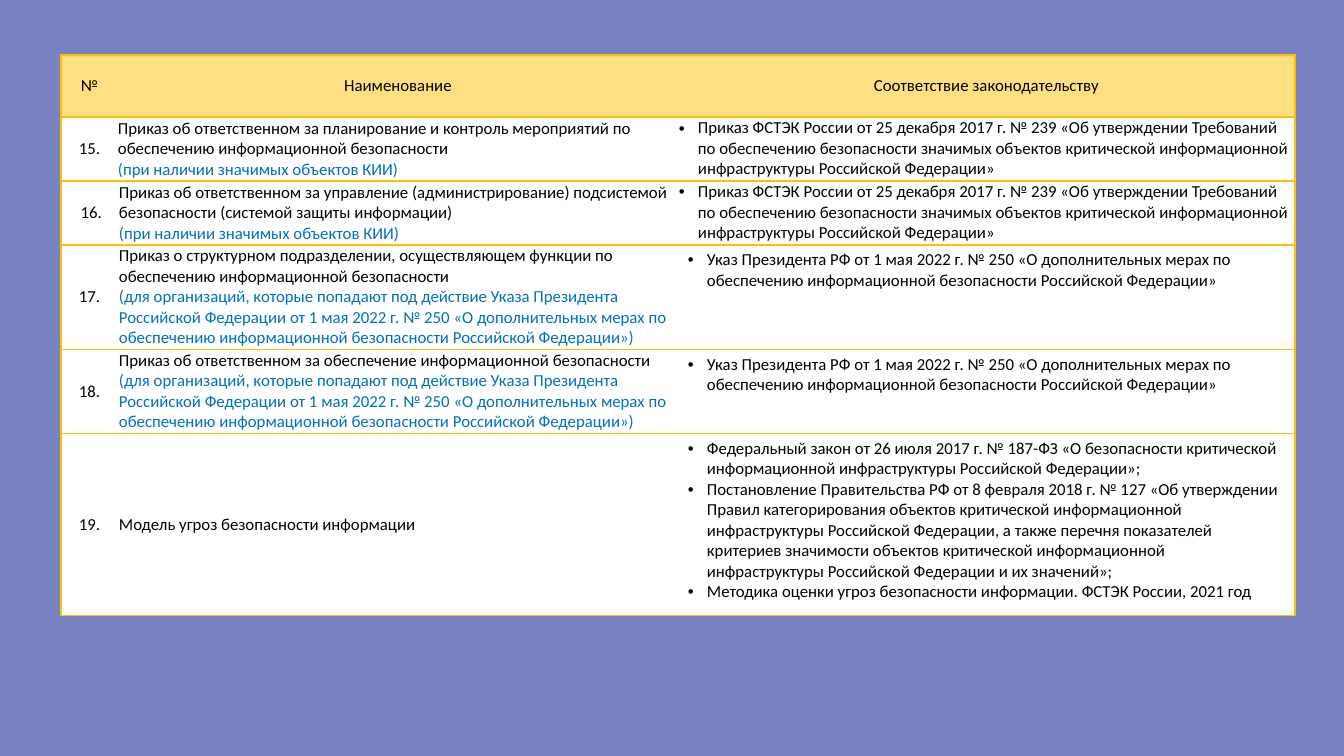
from lxml import etree
from pptx import Presentation
from pptx.dml.color import RGBColor
from pptx.enum.text import MSO_ANCHOR, PP_ALIGN
from pptx.oxml.ns import qn
from pptx.util import Pt

PX = 914400 / 100.8
COLORS = {"background": "7883C0", "header": "FFDF7F", "body": "FFFFFF",
          "border": "FFC000", "text": "000000", "condition": "0070C0"}
COLUMN_WIDTHS = [57, 560, 617]
ROW_HEIGHTS = [62, 64, 64, 104, 84, 182]
MARGIN_SIDES = ["left", "right", "top", "bottom"]
TIGHT, SNUG, ROOMY = [0] * 4, [1] * 4, [10, 10, 5, 5]


def px(length):
    return round(length * PX)


def add_border(cell, position, side, color):
    """Insert one cell edge ahead of the fill; no color hides the edge."""
    line = etree.Element(qn(f"a:ln{side}"), w=str(Pt(1)))
    if color:
        fill = etree.SubElement(line, qn("a:solidFill"))
        etree.SubElement(fill, qn("a:srgbClr"), val=color)
    else:
        etree.SubElement(line, qn("a:noFill"))
    cell._tc.get_or_add_tcPr().insert(position, line)


critical_objects = "(при наличии значимых объектов КИИ)"
decree_subjects = ("(для организаций, которые попадают под действие Указа Президента Российской Федерации "
                   "от 1 мая 2022 г. № 250 «О дополнительных мерах по обеспечению информационной "
                   "безопасности Российской Федерации»)")
order_239 = ("Приказ ФСТЭК России от 25 декабря 2017 г. № 239 «Об утверждении Требований по обеспечению "
             "безопасности значимых объектов критической информационной инфраструктуры Российской Федерации»")
decree_250 = ("Указ Президента РФ от 1 мая 2022 г. № 250 «О дополнительных мерах по обеспечению "
              "информационной безопасности Российской Федерации»")
threat_laws = [
    "Федеральный закон от 26 июля 2017 г. № 187-ФЗ «О безопасности критической информационной "
    "инфраструктуры Российской Федерации»;",
    "Постановление Правительства РФ от 8 февраля 2018 г. № 127 «Об утверждении Правил категорирования "
    "объектов критической информационной инфраструктуры Российской Федерации, а также перечня показателей "
    "критериев значимости объектов критической информационной инфраструктуры Российской Федерации "
    "и их значений»;",
    "Методика оценки угроз безопасности информации. ФСТЭК России, 2021 год",
]

# Each row: number, document name with its condition, laws, margins of the laws cell
documents = [
    (["№"], ["Наименование"], ["Соответствие законодательству"], TIGHT),
    (["15."], ["Приказ об ответственном за планирование и контроль мероприятий по обеспечению "
               "информационной безопасности", critical_objects], [order_239], SNUG),
    ([" 16."], ["Приказ об ответственном за управление (администрирование) подсистемой безопасности "
                "(системой защиты информации)", critical_objects], [order_239], SNUG),
    (["17."], ["Приказ о структурном подразделении, осуществляющем функции по обеспечению "
               "информационной безопасности", decree_subjects], [decree_250], ROOMY),
    (["18."], ["Приказ об ответственном за обеспечение информационной безопасности",
               decree_subjects], [decree_250], ROOMY),
    (["19."], ["Модель угроз безопасности информации"], threat_laws, ROOMY),
]

prs = Presentation()
prs.slide_width, prs.slide_height = px(1344), px(756)
slide = prs.slides.add_slide(prs.slide_layouts[6])
slide.background.fill.solid()
slide.background.fill.fore_color.rgb = RGBColor.from_string(COLORS["background"])

register = slide.shapes.add_table(
    len(documents), len(COLUMN_WIDTHS), px(61), px(55),
    px(sum(COLUMN_WIDTHS)), px(sum(ROW_HEIGHTS))).table
register.first_row = register.horz_banding = False
for column, width in zip(register.columns, COLUMN_WIDTHS):
    column.width = px(width)
for row, height in zip(register.rows, ROW_HEIGHTS):
    row.height = px(height)

for r, (*contents, law_margins) in enumerate(documents):
    for c, paragraphs in enumerate(contents):
        cell = register.cell(r, c)
        is_header, is_law = r == 0, r > 0 and c == 2
        cell.fill.solid()
        cell.fill.fore_color.rgb = RGBColor.from_string(COLORS["header" if is_header else "body"])
        cell.vertical_anchor = MSO_ANCHOR.TOP if is_law else MSO_ANCHOR.MIDDLE
        margins = law_margins if is_law else SNUG if c == 1 and r > 1 else TIGHT
        for side, margin in zip(MARGIN_SIDES, margins):
            setattr(cell, f"margin_{side}", px(margin))

        edges = {"L": c == 0, "R": c == 2, "T": True, "B": True}
        for position, (side, visible) in enumerate(edges.items()):
            add_border(cell, position, side, COLORS["border"] if visible else None)

        for i, text in enumerate(paragraphs):
            paragraph = cell.text_frame.paragraphs[0] if i == 0 else cell.text_frame.add_paragraph()
            paragraph.alignment = PP_ALIGN.CENTER if is_header or c == 0 else PP_ALIGN.LEFT
            run = paragraph.add_run()
            run.text = text
            for name, value in {"name": "Calibri", "size": Pt(12), "bold": False}.items():
                setattr(run.font, name, value)
            is_condition = c == 1 and i == 1
            run.font.color.rgb = RGBColor.from_string(COLORS["condition" if is_condition else "text"])
            if is_law:
                properties = paragraph._p.get_or_add_pPr()
                for name, value in {"marL": px(19), "indent": px(-19)}.items():
                    properties.set(name, str(value))
                etree.SubElement(properties, qn("a:buFont"), typeface="Arial")
                etree.SubElement(properties, qn("a:buChar"), char="•")

prs.save("out.pptx")
